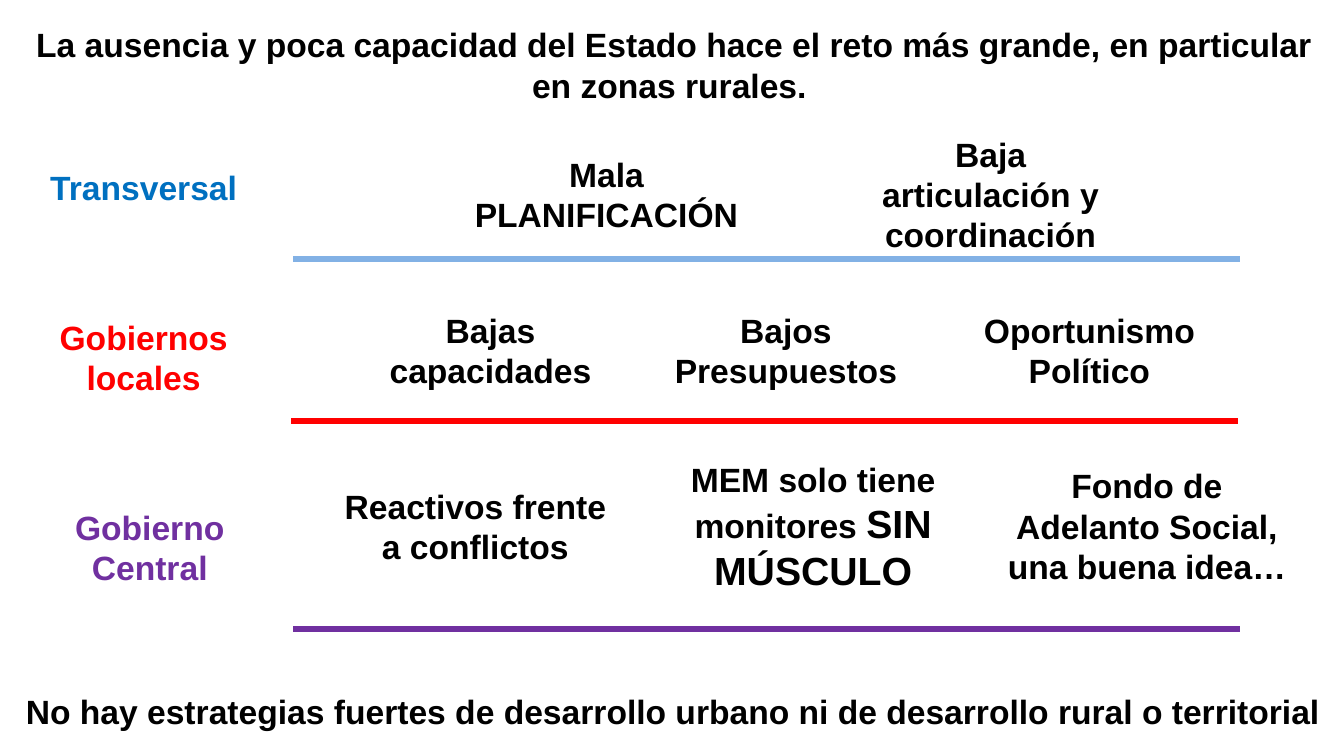
"""Build the slide on weak state capacity by level of government."""
from dataclasses import dataclass

from pptx import Presentation
from pptx.dml.color import RGBColor as Rgb
from pptx.enum.shapes import MSO_CONNECTOR as Link
from pptx.enum.text import MSO_ANCHOR as Anchor, MSO_AUTO_SIZE as Fit, PP_ALIGN as Align
from pptx.oxml.ns import qn
from pptx.util import Inches, Pt


@dataclass(frozen=True)
class Theme:
    font: str = "Arial"
    size: int = 24
    large: int = 28
    rule: float = 4.5
    ink: str = "000000"
    blue: str = "0070C0"
    sky: str = "82B1E5"
    red: str = "FF0000"
    plum: str = "7030A0"


THEME = Theme()
WIDE, HIGH = 13.33, 7.5
BAND, ROW = 0.92, 0.69
SIDE, SPAN = 2.43, 9.39


def write(frame, text, color=THEME.ink, size=THEME.size, tail="", large=THEME.large):
    frame.word_wrap = True
    frame.auto_size = Fit.NONE
    frame.vertical_anchor = Anchor.MIDDLE
    para = frame.paragraphs[0]
    para.alignment = Align.CENTER
    for part, points in ((text, size), (tail, large)):
        if part:
            run = para.add_run()
            run.text = part
            run.font.name = THEME.font
            run.font.size = Pt(points)
            run.font.bold = True
            run.font.color.rgb = Rgb.from_string(color)


class Board:
    def __init__(self, deck, theme):
        self.theme = theme
        self.slide = deck.slides.add_slide(deck.slide_layouts[5])

    def title(self, text, x, y, w, h):
        head = self.slide.shapes.title
        head.left, head.top, head.width, head.height = map(Inches, (x, y, w, h))
        write(head.text_frame, text)

    def label(self, text, x, y, w, h=ROW, **style):
        box = self.slide.shapes.add_textbox(*map(Inches, (x, y, w, h)))
        write(box.text_frame, text, **style)

    def rule(self, x, y, color):
        ends = map(Inches, (x, y, x + SPAN, y))
        line = self.slide.shapes.add_connector(Link.STRAIGHT, *ends)
        line.line.color.rgb = Rgb.from_string(color)
        line.line.width = Pt(self.theme.rule)
        props = line._element.spPr
        props.append(props.makeelement(qn("a:effectLst"), {}))


LEVELS = [
    ("Transversal", 0.21, 1.51, THEME.blue, 2.91, 2.57, THEME.sky, 1.58, [
        ("Mala PLANIFICACIÓN", 4.55, 2.93, ""),
        ("Baja articulación y coordinación", 8.61, 2.43, ""),
    ]),
    ("Gobiernos locales", 0.21, 3.2, THEME.red, 2.89, 4.18, THEME.red, 3.13, [
        ("Bajas capacidades", 3.4, 2.93, ""),
        ("Bajos Presupuestos", 6.33, 2.93, ""),
        ("Oportunismo Político", 9.34, 2.93, ""),
    ]),
    ("Gobierno Central", 0.27, 5.08, THEME.plum, 2.91, 6.24, THEME.plum, 4.87, [
        ("Reactivos frente a conflictos", 3.23, 2.97, ""),
        ("MEM solo tiene monitores ", 6.58, 2.97, "SIN MÚSCULO"),
        ("Fondo de Adelanto Social, una buena idea…", 9.83, 3.09, ""),
    ]),
]


def main():
    deck = Presentation()
    deck.slide_width, deck.slide_height = Inches(WIDE), Inches(HIGH)
    board = Board(deck, THEME)
    board.title("La ausencia y poca capacidad del Estado hace el reto más grande, "
                "en particular en zonas rurales. ", 0.02, 0.18, WIDE, BAND)
    for name, x, y, color, start, base, shade, top, notes in LEVELS:
        board.label(name, x, y, SIDE, color=color)
        for text, left, width, tail in notes:
            board.label(text, left, top, width, tail=tail)
        board.rule(start, base, shade)
    board.label("No hay estrategias fuertes de desarrollo urbano ni de desarrollo "
                "rural o territorial", 0.01, 6.59, WIDE, BAND)
    deck.save("out.pptx")


if __name__ == "__main__":
    main()
